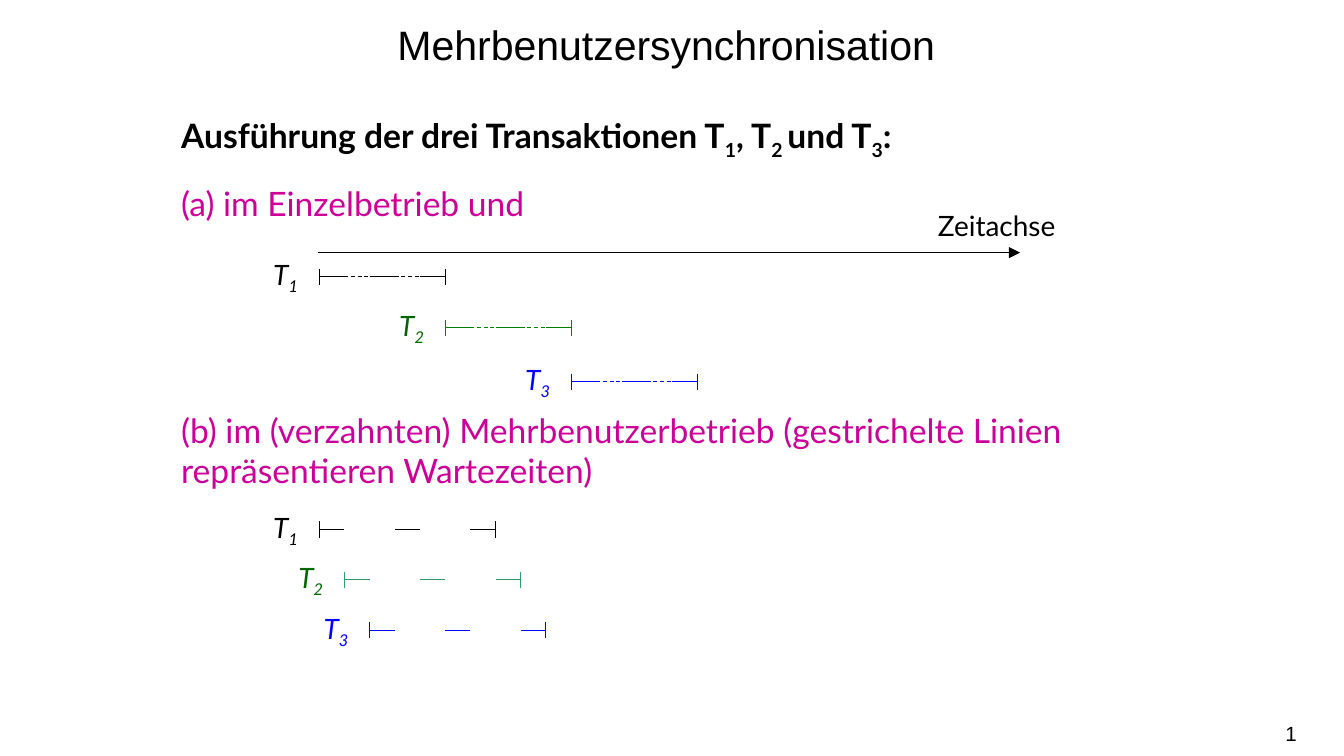
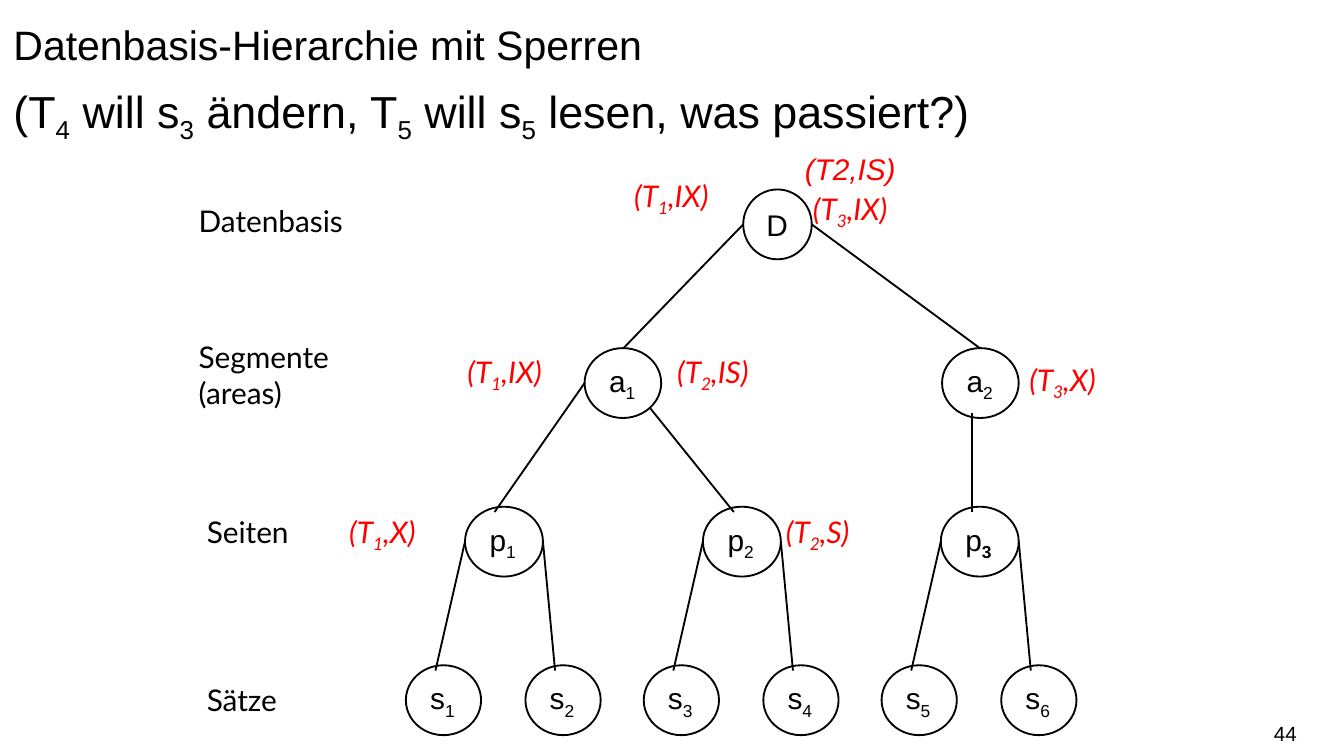
"""Builds two lecture slides on transaction scheduling and hierarchical locks."""
from lxml.etree import SubElement
from pptx import Presentation
from pptx.dml.color import RGBColor
from pptx.enum.dml import MSO_LINE
from pptx.enum.shapes import MSO_CONNECTOR, MSO_SHAPE
from pptx.enum.text import MSO_ANCHOR as ANCHOR, MSO_AUTO_SIZE as FIT, PP_ALIGN as ALIGN
from pptx.oxml.ns import qn
from pptx.util import Inches, Pt

COLORS = {
    "black": "000000", "magenta": "CC0099", "red": "FF0000", "blue": "0000FF",
    "green": "008000", "sea": "339966", "forest": "006600",
}
TITLE_ONLY = 5
UNIT = 3 / 16
LANE_LEFT = 19 / 8


class Deck:
    def __init__(self):
        self.prs = Presentation()
        self.prs.slide_width = Inches(10)
        self.prs.slide_height = Inches(10 * 9 / 16)

    def slide(self, number, box, lines, align):
        self.s = self.prs.slides.add_slide(self.prs.slide_layouts[TITLE_ONLY])
        self.shapes = self.s.shapes
        self.title(box, lines, align)
        sp = self.text((7.41, 5.31, 2.24, 0.3), [number], 11, font="Arial",
                       align=ALIGN.RIGHT, fit=FIT.NONE)
        tf = sp.text_frame
        tf.vertical_anchor = ANCHOR.MIDDLE
        tf.margin_left = tf.margin_right = 0

    def title(self, box, lines, align):
        sp = self.s.shapes.title
        sp.left, sp.top, sp.width, sp.height = map(Inches, box)
        tf = sp.text_frame
        tf.auto_size = FIT.NONE
        tf.vertical_anchor = ANCHOR.TOP
        p = tf.paragraphs[0]
        p.alignment = align
        p.line_spacing = 1.25
        for i, (text, size) in enumerate(lines):
            if i:
                p.add_line_break()
                SubElement(p._p[-1], qn("a:rPr"), sz=str(lines[i - 1][1] * 100))
            self.runs(p, text, size, "Arial")

    def runs(self, p, text, size, font, color="black", bold=False, italic=False):
        """Add text run by run; parts between tildes are subscripts."""
        for i, part in enumerate(text.split("~")):
            if not part:
                continue
            r = p.add_run()
            r.text = part
            r.font.name = font
            r.font.size = Pt(size)
            r.font.bold = bold
            r.font.italic = italic
            r.font.color.rgb = RGBColor.from_string(COLORS[color])
            if i % 2:
                r.font._element.set("baseline", "-25000")

    def text(self, box, lines, size, color="black", font="Lato", bold=False,
             italic=False, align=ALIGN.LEFT, fit=FIT.SHAPE_TO_FIT_TEXT):
        sp = self.shapes.add_textbox(*map(Inches, box))
        tf = sp.text_frame
        tf.word_wrap = True
        tf.auto_size = fit
        for i, line in enumerate(lines):
            p = tf.add_paragraph() if i else tf.paragraphs[0]
            p.alignment = align
            self.runs(p, line, size, font, color, bold, italic)
        return sp

    def line(self, x1, y1, x2, y2, color="black", width=1, dashed=False, arrow=False):
        c = self.shapes.add_connector(MSO_CONNECTOR.STRAIGHT, *map(Inches, (x1, y1, x2, y2)))
        c.line.width = Pt(width)
        c.line.color.rgb = RGBColor.from_string(COLORS[color])
        if dashed:
            c.line.dash_style = MSO_LINE.DASH
        spPr = c._element.spPr
        if arrow:
            SubElement(spPr.find(qn("a:ln")), qn("a:tailEnd"), type="triangle")
        SubElement(spPr, qn("a:effectLst"))

    def node(self, x, y, width, text):
        sp = self.shapes.add_shape(MSO_SHAPE.FLOWCHART_CONNECTOR,
                                   *map(Inches, (x, y, width, 0.52)))
        sp.shadow.inherit = False
        sp.fill.background()
        sp.line.width = Pt(1)
        sp.line.color.rgb = RGBColor.from_string(COLORS["black"])
        tf = sp.text_frame
        tf.word_wrap = False
        tf.vertical_anchor = ANCHOR.MIDDLE
        p = tf.paragraphs[0]
        p.alignment = ALIGN.LEFT
        self.runs(p, text, 16, "Arial")
        return sp

    def open_group(self):
        self.shapes = self.s.shapes.add_group_shape().shapes

    def close_group(self):
        self.shapes = self.s.shapes


def lane(deck, number, x, y, segments, line_color, text_color):
    """Draw one transaction; segments are (start unit, dashed) pairs."""
    deck.open_group()
    for start, dashed in segments:
        left = x + start * UNIT
        deck.line(left, y, left + UNIT, y, line_color, 0.5, dashed)
    for tick in (x, x + (segments[-1][0] + 1) * UNIT):
        deck.line(tick, y - 0.06, tick, y + 0.06, line_color, 0.5)
    deck.text((x - 0.44, y - 0.19, 0.5, 0.35), [f"T~{number}~"], 15, text_color, italic=True)
    deck.close_group()


def build_schedule(deck):
    deck.slide("1", (1.25, 0, 7.5, 0.69), [("Mehrbenutzersynchronisation ", 22)], ALIGN.CENTER)
    deck.text((1.25, 0.81, 7.5, 0.4),
              ["Ausführung der drei Transaktionen T~1~, T~2 ~und T~3~:"], 18, bold=True)
    deck.text((1.25, 1.31, 7.5, 0.4), ["(a) im Einzelbetrieb und"], 18, "magenta")
    deck.text((1.25, 3, 7.5, 0.71),
              ["(b) im (verzahnten) Mehrbenutzerbetrieb "
               "(gestrichelte Linien repräsentieren Wartezeiten)"], 18, "magenta")
    deck.line(2.37, 1.88, 7.59, 1.88, width=0.5, arrow=True)
    deck.text((6.88, 1.5, 1.31, 0.35), ["Zeitachse"], 15)

    serial = [(i, i % 2 == 1) for i in range(5)]
    interleaved = [(i, False) for i in (0, 3, 6)]
    text_colors = ("black", "forest", "blue")
    for i, (y, color) in enumerate(zip((2.06, 2.44, 2.84), ("black", "green", "blue"))):
        lane(deck, i + 1, LANE_LEFT + i * 5 * UNIT, y, serial, color, text_colors[i])
    for i, color in enumerate(("black", "sea", "blue")):
        lane(deck, i + 1, LANE_LEFT + i * UNIT, 3.94 + i * 2 * UNIT,
             interleaved, color, text_colors[i])


def build_hierarchy(deck):
    deck.slide("44", (0, 0, 10, 0.94),
               [("Datenbasis-Hierarchie mit Sperren", 22),
                ("(T~4~ will s~3~ ändern, T~5~ will s~5~ lesen, was passiert?)", 24)],
               ALIGN.LEFT)
    root_y, area_y, page_y, record_y = (1.41 + 1.18 * i for i in range(4))

    for i in range(3):
        x = 3.46 + 1.77 * i
        deck.open_group()
        page = deck.node(x, page_y, 0.58, f"p~{i + 1}~")
        if i == 2:
            page.text_frame.paragraphs[0].runs[1].font.bold = True
        for j in range(2):
            deck.node(x - 0.44 + 0.89 * j, record_y, 0.56, f"s~{2 * i + j + 1}~")
            deck.line(x + 0.58 * j, page_y + 0.26, x - 0.22 + 0.89 * j, record_y + 0.04)
        deck.close_group()

    for i, x in enumerate((4.35, 7.01)):
        deck.node(x, area_y, 0.57, f"a~{i + 1}~")
    deck.node(5.53, root_y, 0.51, "D")
    for edge in ((6.04, 1.67, 7.29, 2.59), (5.53, 1.67, 4.64, 2.59),
                 (4.84, 3.04, 5.46, 3.81), (4.35, 2.85, 3.68, 3.81),
                 (7.23, 3.07, 7.23, 3.81)):
        deck.line(*edge)

    locks = [
        (5.95, 1.37, 1.06, "(T~3~,IX)"), (3.38, 2.58, 0.94, "(T~1~,IX)"),
        (4.94, 2.58, 0.94, "(T~2~,IS)"), (7.56, 2.64, 0.81, "(T~3~,X)"),
        (5.75, 3.77, 0.94, "(T~2~,S)"), (2.5, 3.77, 0.94, "(T~1~,X)"),
        (4.62, 1.27, 0.94, "(T~1~,IX)"),
    ]
    for x, y, width, lock in locks:
        deck.text((x, y, width, 0.37), [lock], 16, "red", italic=True)

    levels = [
        ((1.38, 1.46, 1.38, 0.37), ["Datenbasis"]),
        ((1.38, 2.47, 1.31, 0.64), ["Segmente", "(areas)"]),
        ((1.44, 3.77, 0.88, 0.37), ["Seiten"]),
        ((1.44, 5.02, 0.81, 0.37), ["Sätze"]),
    ]
    for box, lines in levels:
        deck.text(box, lines, 16)
    deck.text((5.89, 1.07, 1.06, 0.37), ["(T2,IS)"], 16, "red", "Arial", italic=True)


def main():
    deck = Deck()
    build_schedule(deck)
    build_hierarchy(deck)
    deck.prs.save("out.pptx")


if __name__ == "__main__":
    main()
